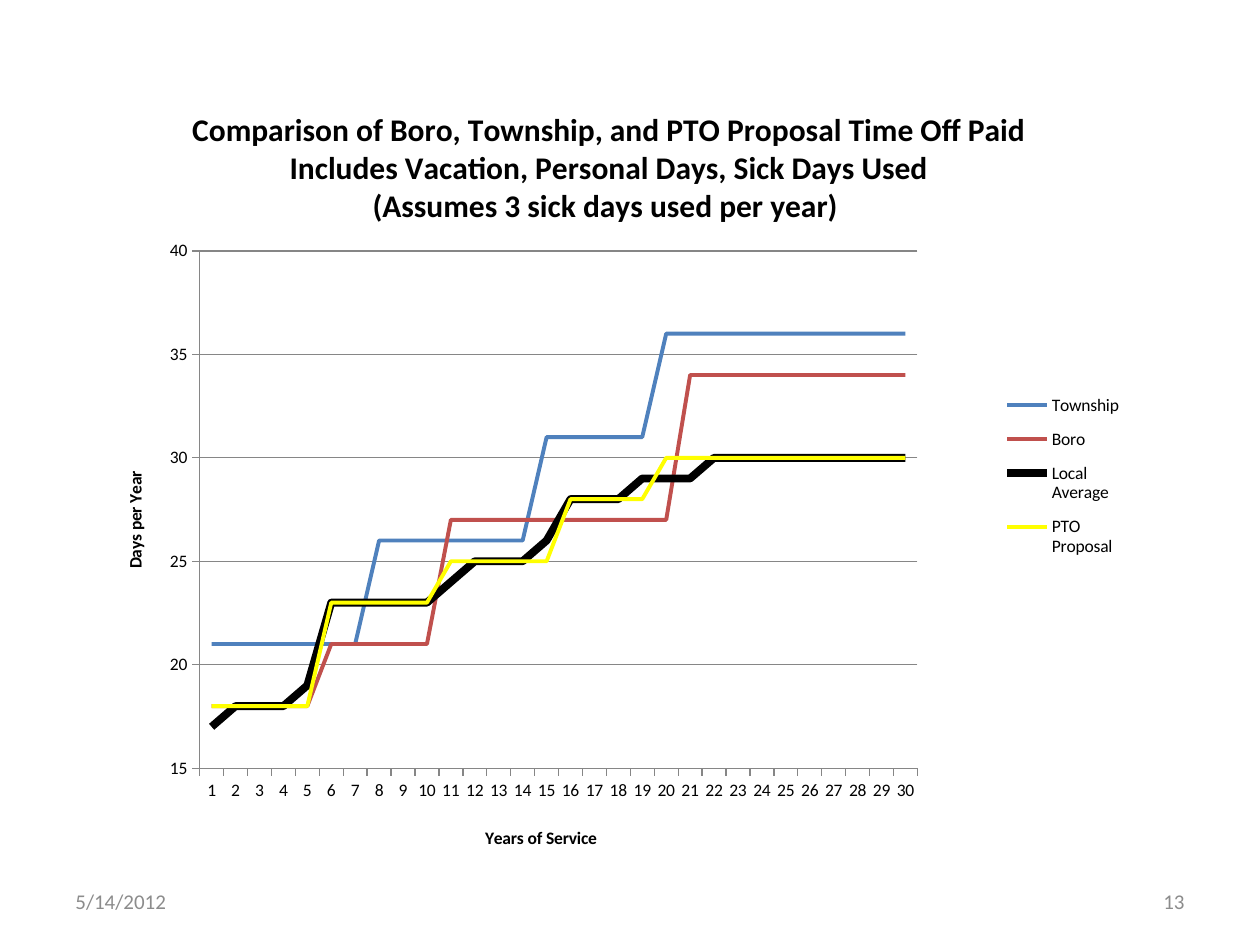
import pptx
import pptx.chart.data
import pptx.dml.color
import pptx.enum.chart
import pptx.enum.text
import pptx.oxml
import pptx.oxml.ns
import pptx.util
from dataclasses import dataclass

Pt = pptx.util.Pt
ALIGN = pptx.enum.text.PP_ALIGN
FONT = "Calibri"
COLORS = {"text": "000000", "footer": "8C8C8C", "grid": "868686",
          "township": "4F81BD", "boro": "C0504D",
          "average": "000000", "proposal": "FFFF00"}


@dataclass
class Plan:
    """Days off per year, as (days, number of years) steps."""
    name: str
    color: str
    steps: list[tuple[int, int]]
    width: float = 2.25

    def days(self) -> list[int]:
        return [days for days, years in self.steps for _ in range(years)]


@dataclass
class Footer:
    text: str
    left: float
    align: ALIGN


PLANS = [
    Plan("Township", "township", [(21, 7), (26, 7), (31, 5), (36, 11)]),
    Plan("Boro", "boro", [(18, 5), (21, 5), (27, 10), (34, 10)]),
    Plan("Local Average", "average",
         [(17, 1), (18, 3), (19, 1), (23, 5), (24, 1), (25, 3), (26, 1),
          (28, 3), (29, 3), (30, 9)], 4.5),
    Plan("PTO Proposal", "proposal",
         [(18, 5), (23, 5), (25, 5), (28, 4), (30, 11)]),
]
FOOTERS = [Footer("5/14/2012", 36, ALIGN.LEFT), Footer("13", 516, ALIGN.RIGHT)]
HEADING = ("Comparison of Boro, Township, and PTO Proposal Time Off Paid\n"
           "Includes Vacation, Personal Days, Sick Days Used\n"
           "(Assumes 3 sick days used per year) ")


def rgb(name: str) -> pptx.dml.color.RGBColor:
    return pptx.dml.color.RGBColor.from_string(COLORS[name])


def write(frame, text: str, *, size: float, color: str = "text",
          bold: bool = False, align: ALIGN = ALIGN.CENTER) -> None:
    frame.text = text
    for paragraph in frame.paragraphs:
        paragraph.alignment = align
        for run in paragraph.runs:
            run.font.name, run.font.size, run.font.bold = FONT, Pt(size), bold
            run.font.color.rgb = rgb(color)


def place(part, inner: bool = False, **fractions: float) -> None:
    """Give a chart part a fixed place, in fractions of the chart."""
    for layout in part.findall(pptx.oxml.ns.qn("c:layout")):
        part.remove(layout)
    target = '<c:layoutTarget val="inner"/>' if inner else ""
    modes = "".join(f'<c:{key}Mode val="edge"/>' for key in "xy")
    values = "".join(f'<c:{key} val="{value}"/>' for key, value in fractions.items())
    layout = pptx.oxml.parse_xml(
        f'<c:layout {pptx.oxml.ns.nsdecls("c")}><c:manualLayout>'
        f'{target}{modes}{values}</c:manualLayout></c:layout>')
    overlay = part.find(pptx.oxml.ns.qn("c:overlay"))
    if overlay is None:
        part.insert(0, layout)
    else:
        overlay.addprevious(layout)


def draw_footer(slide, footer: Footer) -> None:
    box = slide.shapes.add_textbox(Pt(footer.left), Pt(500.4), Pt(168), Pt(28.8))
    box.text_frame.word_wrap = True
    box.text_frame.vertical_anchor = pptx.enum.text.MSO_ANCHOR.MIDDLE
    write(box.text_frame, footer.text, size=12, color="footer", align=footer.align)


def style_axis(axis, title: str) -> None:
    write(axis.axis_title.text_frame, title, size=10, bold=True)
    axis.major_tick_mark = pptx.enum.chart.XL_TICK_MARK.OUTSIDE
    axis.minor_tick_mark = pptx.enum.chart.XL_TICK_MARK.NONE
    axis.format.line.color.rgb = rgb("grid")
    axis.format.line.width = Pt(0.75)


def draw_chart(slide) -> None:
    data = pptx.chart.data.CategoryChartData()
    data.categories = [str(year) for year in range(1, 31)]
    for plan in PLANS:
        data.add_series(plan.name, plan.days())
    chart = slide.shapes.add_chart(
        pptx.enum.chart.XL_CHART_TYPE.LINE,
        Pt(23.8), Pt(41.8), Pt(645), Pt(451.4), data).chart
    chart.font.name, chart.font.size = FONT, Pt(10)
    chart.font.color.rgb = rgb("text")
    write(chart.chart_title.text_frame, HEADING, size=18, bold=True)

    # Axes
    years, days = chart.category_axis, chart.value_axis
    style_axis(years, "Years of Service")
    style_axis(days, "Days per Year")
    days.minimum_scale, days.maximum_scale, days.major_unit = 15, 40, 5
    days.has_major_gridlines = True
    days.major_gridlines.format.line.color.rgb = rgb("grid")
    days.major_gridlines.format.line.width = Pt(0.75)

    # Lines
    chart.plots[0].vary_by_categories = False
    for series, plan in zip(chart.plots[0].series, PLANS):
        series.smooth = False
        series.marker.style = pptx.enum.chart.XL_MARKER_STYLE.NONE
        series.format.line.color.rgb = rgb(plan.color)
        series.format.line.width = Pt(plan.width)

    # Legend and places of the parts
    chart.has_legend = True
    chart.legend.position = pptx.enum.chart.XL_LEGEND_POSITION.RIGHT
    chart.legend.include_in_layout = False
    root = chart.element if hasattr(chart, "element") else chart._chartSpace
    places = {
        "c:chart/c:title": dict(x=0.13, y=0.04),
        "c:chart/c:plotArea": dict(inner=True, x=0.14, y=0.225, w=0.636, h=0.655),
        "c:chart/c:legend": dict(x=0.85, y=0.39, w=0.11, h=0.24),
        ".//c:catAx/c:title": dict(x=0.39, y=0.95),
        ".//c:valAx/c:title": dict(x=0.07, y=0.5),
    }
    for query, spot in places.items():
        place(root.xpath(query)[0], **spot)


def main() -> None:
    deck = pptx.Presentation()
    deck.slide_width, deck.slide_height = Pt(720), Pt(540)
    slide = deck.slides.add_slide(deck.slide_layouts[6])
    for footer in FOOTERS:
        draw_footer(slide, footer)
    draw_chart(slide)
    deck.save("out.pptx")


if __name__ == "__main__":
    main()
